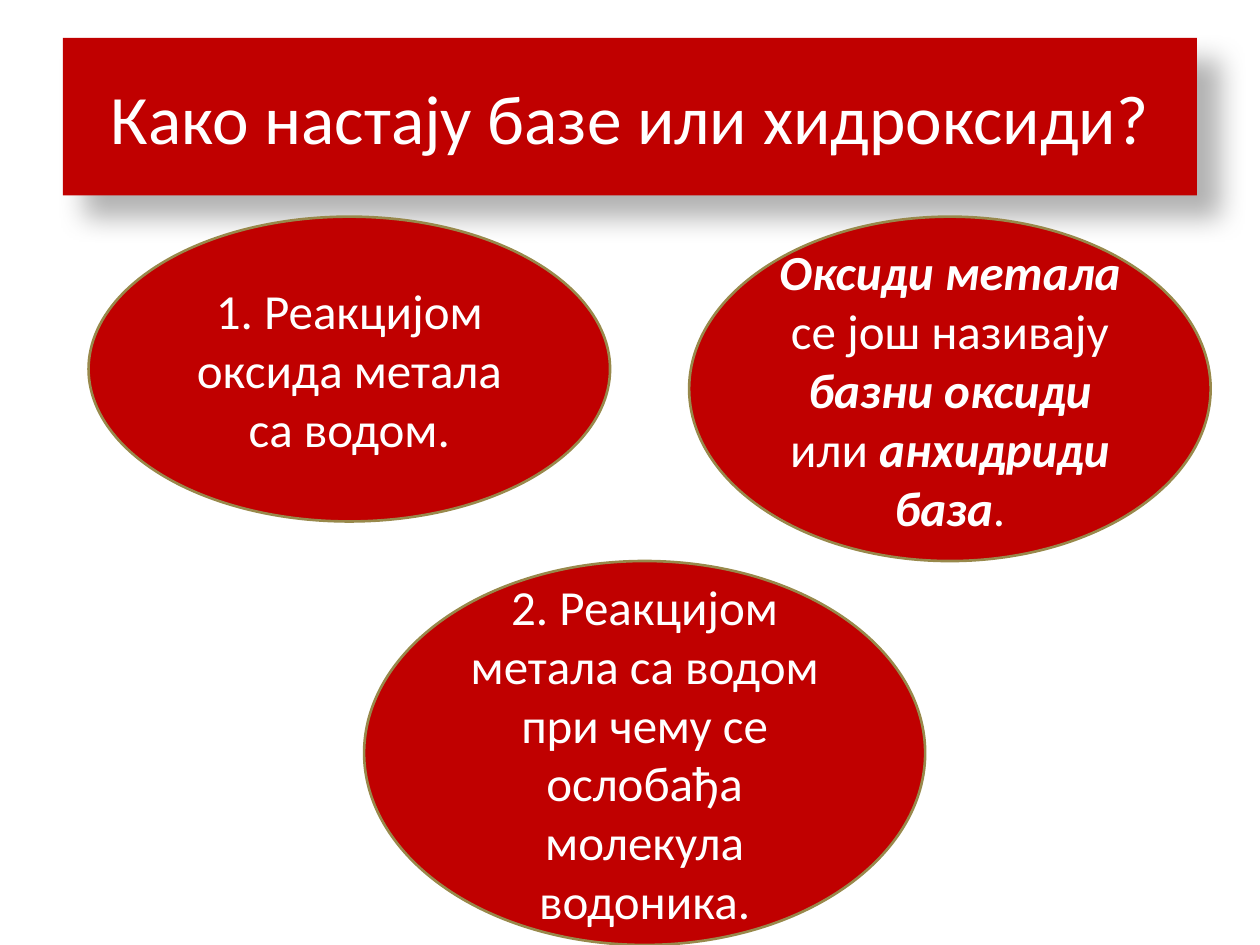
from pptx import Presentation
from pptx import util as u
from pptx.dml.color import RGBColor
from pptx.enum import shapes, text
from pptx.oxml import parse_xml
from pptx.oxml.ns import nsdecls, qn

RED, WHITE, OLIVE = "C00000", "FFFFFF", "98894B"


def color(value):
    return RGBColor.from_string(value)


def add_text(sp, runs, size=28, font="Calibri", fill=WHITE):
    tf = sp.text_frame
    tf.word_wrap = True
    tf.vertical_anchor = text.MSO_ANCHOR.MIDDLE
    p = tf.paragraphs[0]
    p.alignment = text.PP_ALIGN.CENTER
    for content, strong in runs:
        r = p.add_run()
        r.text = content
        r.font.name = font
        r.font.size = u.Pt(size)
        r.font.bold = r.font.italic = strong
        r.font.color.rgb = color(fill)


def add_shape(s, kind, box):
    sp = s.shapes.add_shape(kind, *map(u.Pt, box))
    sp.shadow.inherit = False
    sp.fill.solid()
    sp.fill.fore_color.rgb = color(RED)
    return sp


def add_shadow(sp, blur, distance, angle, opacity):
    sp._element.spPr.find(qn("a:effectLst")).append(parse_xml(
        f'<a:outerShdw {nsdecls("a")} blurRad="{u.Pt(blur)}" '
        f'dist="{u.Pt(distance)}" dir="{angle * 60000}" algn="tl" '
        f'rotWithShape="0"><a:srgbClr val="000000">'
        f'<a:alpha val="{opacity * 1000}"/></a:srgbClr></a:outerShdw>'))


def add_title(s, box, content):
    sp = add_shape(s, shapes.MSO_SHAPE.RECTANGLE, box)
    sp.line.fill.background()
    add_shadow(sp, blur=15, distance=18, angle=45, opacity=30)
    add_text(sp, [(content, False)], size=39.6)


def add_oval(s, box, runs):
    sp = add_shape(s, shapes.MSO_SHAPE.OVAL, box)
    sp.line.color.rgb = color(OLIVE)
    sp.line.width = u.Pt(1.5)
    add_text(sp, runs)


def main():
    prs = Presentation()
    prs.slide_width, prs.slide_height = u.Pt(720), u.Pt(540)
    s = prs.slides.add_slide(prs.slide_layouts[6])
    add_title(s, (36, 21.6, 648, 90), "Како настају базе или хидроксиди?")
    add_oval(s, (50.6, 123.8, 298, 174.2),
             [("1. Реакцијом оксида метала са водом.", False)])
    add_oval(s, (208.1, 320.6, 320.6, 219.4),
             [("2. Реакцијом метала са водом при чему се ослобађа "
               "молекула водоника.", False)])
    add_oval(s, (393.8, 123.8, 298, 196.8),
             [("Оксиди метала", True), (" се још називају ", False),
              ("базни оксиди ", True), ("или ", False),
              ("анхидриди база", True), (".", False)])
    prs.save("out.pptx")


if __name__ == "__main__":
    main()
